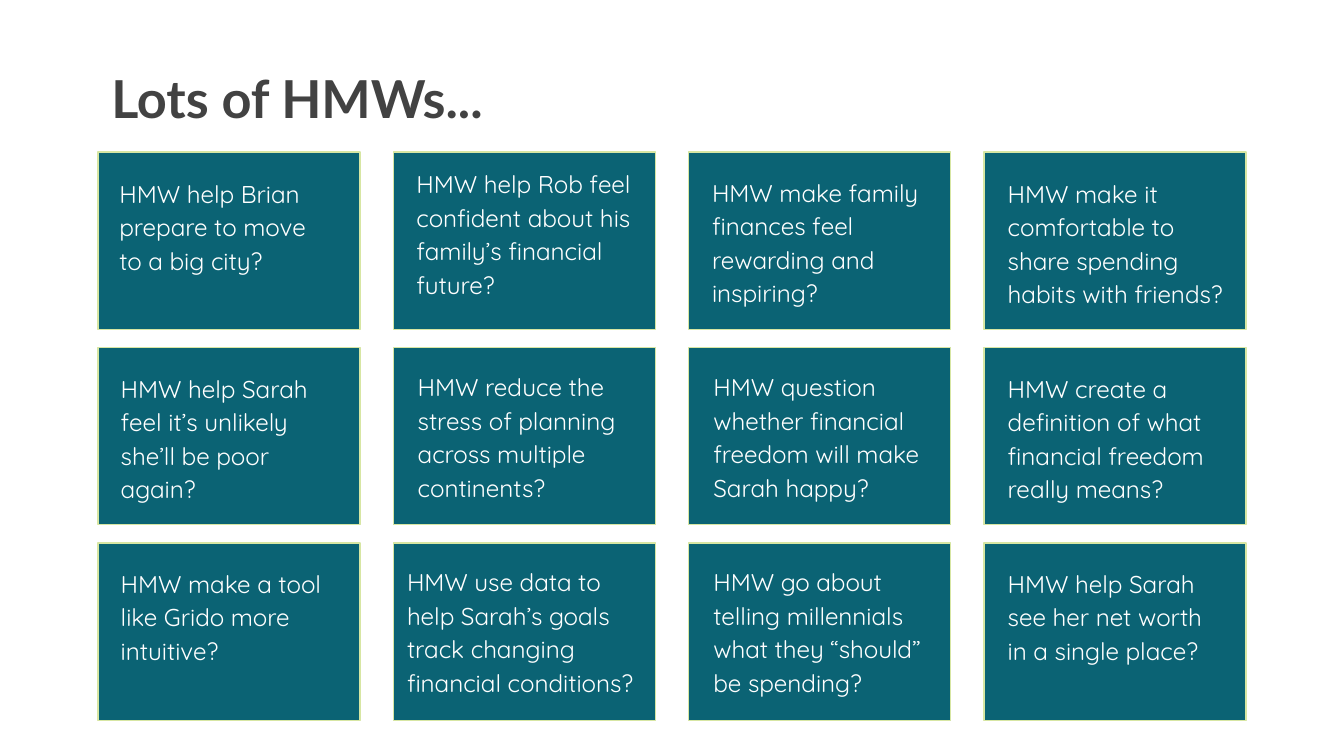
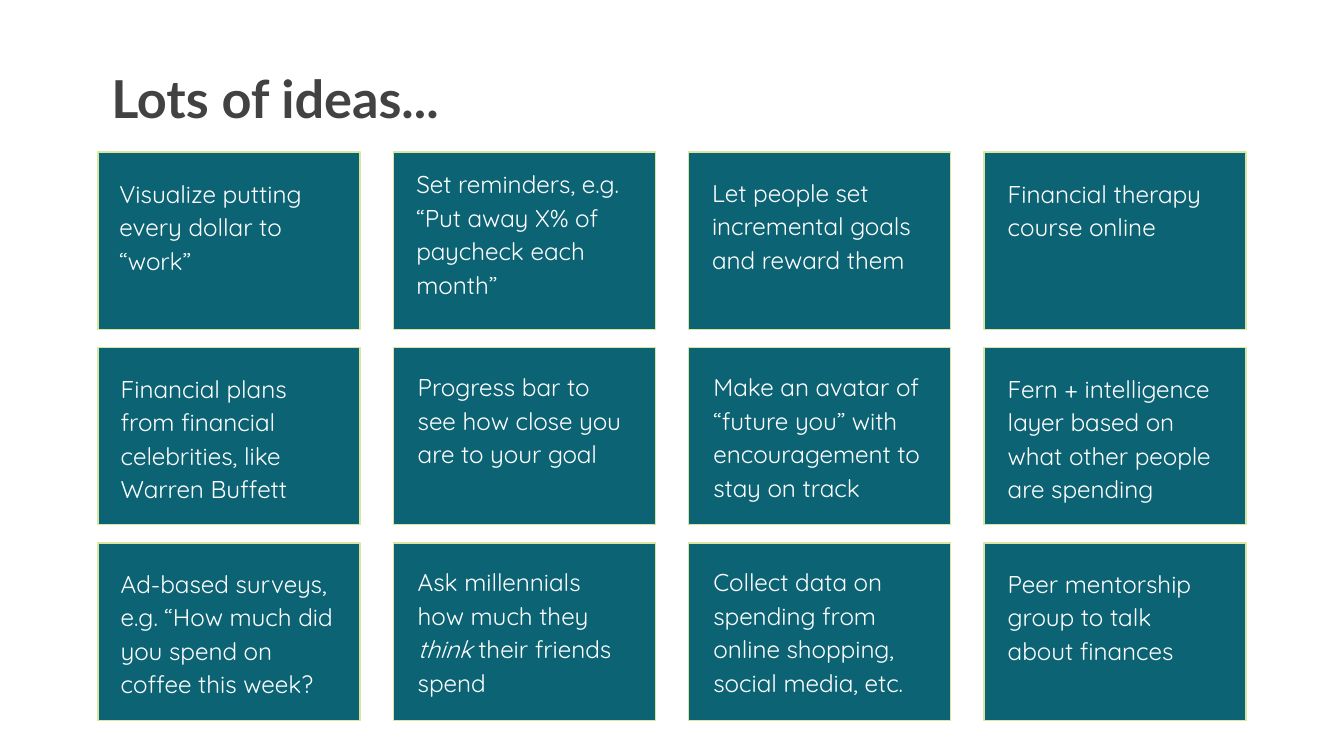
from typing import Any, NamedTuple

from pptx import Presentation
from pptx.dml.color import RGBColor
from pptx.enum.shapes import MSO_SHAPE as Shape
from pptx.enum.text import MSO_ANCHOR as Anchor, PP_ALIGN as Align
from pptx.util import Inches, Pt

# Shared colours and text styles
TEAL, LIME, WHITE, CHARCOAL = "0B6374", "D7E6A3", "FFFFFF", "424242"
TITLE_FONT = {"name": "Lato", "size": Pt(28), "bold": True}
CARD_FONT = {"name": "Quicksand", "size": Pt(13)}
CARD_PARAGRAPH = {"line_spacing": 1.15, "space_after": Pt(12)}
FRAME = {"word_wrap": True, "vertical_anchor": Anchor.TOP}
MARGINS = ("margin_left", "margin_top", "margin_right", "margin_bottom")

# Card grid, in inches
COLUMNS, ROWS = 4, 3
CARD_LEFT, CARD_TOP, CARD_WIDTH, CARD_HEIGHT = 0.73, 1.13, 1.95, 1.32
COLUMN_STEP = (7.32 - CARD_LEFT) / (COLUMNS - 1)
ROW_STEP = (4.04 - CARD_TOP) / (ROWS - 1)

# Card texts: the first row sits slightly apart from the rows below it
TEXT_TOP, TEXT_STEP, TEXT_HEIGHT = 1.2, 1.45, 1.21
FIRST_ROW_LEFTS, OTHER_ROW_LEFTS = (0.79, 3, 5.2, 7.4), (0.8, 3.01, 5.21, 7.4)
FIRST_ROW_LIFTS, OTHER_ROW_LIFTS = (0, 0.07, 0.01, 0), (0, 0.01, 0.01, 0)


class Card(NamedTuple):
    text: str
    emphasis: str = ""
    width: float = 1.8
    outdent: float = 0


class Board(NamedTuple):
    title: str
    cards: list[Card]  # row by row


BOARDS = [
    Board("Lots of HMWs...", [
        Card("HMW help Brian prepare to move to a big city?", width=1.77),
        Card("HMW help Rob feel confident about his family’s financial future?"),
        Card("HMW make family finances feel rewarding and inspiring?"),
        Card("HMW make it comfortable to share spending habits with friends?"),
        Card("HMW help Sarah feel it’s unlikely she’ll be poor again?"),
        Card("HMW reduce the stress of planning across multiple continents?"),
        Card("HMW question whether financial freedom will make Sarah happy?"),
        Card("HMW create a definition of what financial freedom really means?"),
        Card("HMW make a tool like Grido more intuitive?"),
        Card("HMW use data to help Sarah’s goals track changing financial conditions?",
             width=CARD_WIDTH, outdent=0.08),
        Card("HMW go about telling millennials what they “should” be spending?"),
        Card("HMW help Sarah see her net worth in a single place?"),
    ]),
    Board("Lots of ideas...", [
        Card("Visualize putting every dollar to “work”"),
        Card("Set reminders, e.g. “Put away X% of paycheck each month”"),
        Card("Let people set incremental goals and reward them"),
        Card("Financial therapy course online"),
        Card("Financial plans from financial celebrities, like Warren Buffett"),
        Card("Progress bar to see how close you are to your goal"),
        Card("Make an avatar of “future you” with encouragement to stay on track"),
        Card("Fern + intelligence layer based on what other people are spending"),
        Card("Ad-based surveys, e.g. “How much did you spend on coffee this week?"),
        Card("Ask millennials how much they think their friends spend",
             emphasis="think "),
        Card("Collect data on spending from online shopping, social media, etc."),
        Card("Peer mentorship group to talk about finances"),
    ]),
]


def color(value: str) -> RGBColor:
    return RGBColor.from_string(value)


def apply(target: Any, values: dict[str, Any]) -> None:
    for name, value in values.items():
        setattr(target, name, value)


def add_text(page: Any, left: float, top: float, width: float, height: float,
             parts: list[tuple[str, bool]], font: dict[str, Any], ink: str,
             paragraph: dict[str, Any]) -> None:
    """Add one paragraph made of (text, italic) parts."""
    box = page.shapes.add_textbox(Inches(left), Inches(top),
                                  Inches(width), Inches(height))
    frame = box.text_frame
    apply(frame, FRAME | dict.fromkeys(MARGINS, Inches(0.1)))
    para = frame.paragraphs[0]
    apply(para, {"alignment": Align.LEFT} | paragraph)
    for text, italic in parts:
        span = para.add_run()
        span.text = text
        apply(span.font, font | {"italic": italic})
        span.font.color.rgb = color(ink)


def add_panel(page: Any, column: int, row: int) -> None:
    panel = page.shapes.add_shape(
        Shape.RECTANGLE,
        Inches(CARD_LEFT + column * COLUMN_STEP), Inches(CARD_TOP + row * ROW_STEP),
        Inches(CARD_WIDTH), Inches(CARD_HEIGHT))
    panel.shadow.inherit = False
    panel.fill.solid()
    panel.fill.fore_color.rgb = color(TEAL)
    panel.line.color.rgb = color(LIME)
    panel.line.width = Pt(0.75)


def add_card_text(page: Any, card: Card, column: int, row: int) -> None:
    lefts = OTHER_ROW_LEFTS if row else FIRST_ROW_LEFTS
    lifts = OTHER_ROW_LIFTS if row else FIRST_ROW_LIFTS
    parts = [(card.text, False)]
    if card.emphasis:
        before, stressed, after = card.text.partition(card.emphasis)
        parts = [(before, False), (stressed, True), (after, False)]
    add_text(page, lefts[column] - card.outdent,
             TEXT_TOP + row * TEXT_STEP - lifts[column],
             card.width, TEXT_HEIGHT, parts, CARD_FONT, WHITE, CARD_PARAGRAPH)


def add_board(deck: Any, board: Board) -> None:
    page = deck.slides.add_slide(deck.slide_layouts[6])
    page.background.fill.solid()
    page.background.fill.fore_color.rgb = color(WHITE)
    # Panels, then their texts
    for column in range(COLUMNS):
        for row in range(ROWS):
            add_panel(page, column, row)
    for index, card in enumerate(board.cards):
        row, column = divmod(index, COLUMNS)
        add_card_text(page, card, column, row)
    # Title
    add_text(page, CARD_LEFT, 0.39, 3.27, 0.63, [(board.title, False)],
             TITLE_FONT, CHARCOAL, {})


def main() -> None:
    deck = Presentation()
    # Widescreen, 16:9
    deck.slide_width, deck.slide_height = Inches(10), Inches(10 * 9 / 16)
    for board in BOARDS:
        add_board(deck, board)
    deck.save("out.pptx")


if __name__ == "__main__":
    main()
